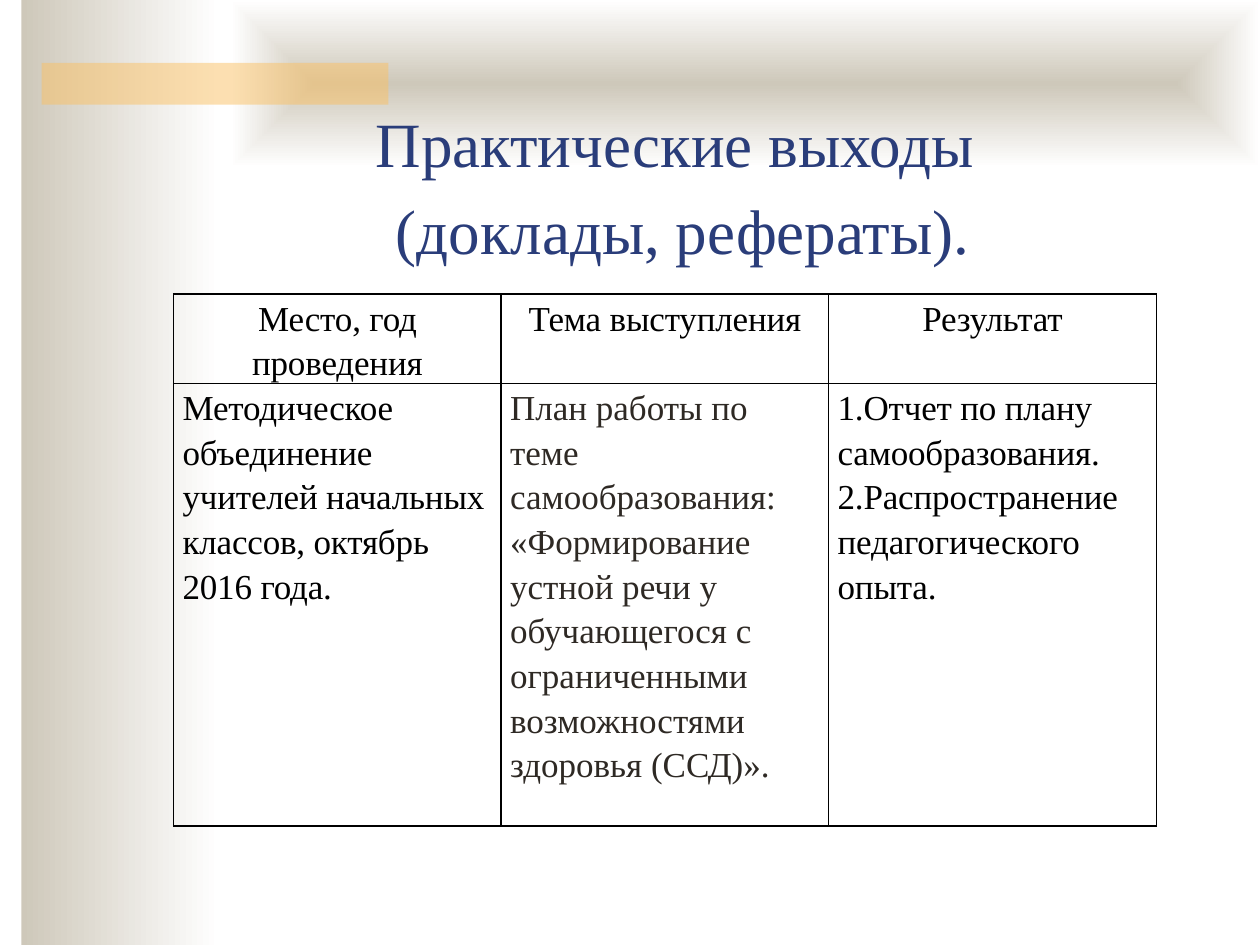
from lxml import etree
from pptx import Presentation
from pptx import util as u
from pptx.dml.color import RGBColor
from pptx.enum import shapes, text
from pptx.oxml import parse_xml
from pptx.oxml.ns import nsdecls, qn

COLORS = {
    "sand": "CEC8BA",
    "white": "FFFFFF",
    "amber": "FAC164",
    "navy": "2A3D7A",
    "black": "000000",
    "charcoal": "2E2924",
}
FONT = "Times New Roman"
HEADERS = ["Место, год проведения", "Тема выступления", "Результат"]
REPORT = [
    ["Методическое объединение учителей начальных классов, октябрь 2016 года."],
    ["План работы по теме самообразования: «Формирование устной речи "
     "у обучающегося с ограниченными возможностями здоровья (ССД)»."],
    ["1.Отчет по плану самообразования.",
     "2.Распространение педагогического опыта."],
]


def rgb(name):
    return RGBColor.from_string(COLORS[name])


def write(paragraph, content, size=20, color="black", align=None, spacing=0):
    paragraph.text = content
    paragraph.alignment = align
    paragraph.line_spacing = 1.15
    paragraph.space_before = paragraph.space_after = u.Pt(0)
    paragraph.font.size = u.Pt(size)
    for run in paragraph.runs:
        run.font.name = FONT
        run.font.size = u.Pt(size)
        run.font.color.rgb = rgb(color)
        run.font._element.set("spc", str(spacing))


def add_panel(slide, box):
    panel = slide.shapes.add_shape(shapes.MSO_SHAPE.RECTANGLE, *box)
    panel.shadow.inherit = False
    panel.line.fill.background()
    return panel


def fade(panel):
    panel.fill.gradient()
    panel.fill.gradient_angle = 0
    for stop, name in zip(panel.fill.gradient_stops, ("sand", "white")):
        stop.color.rgb = rgb(name)


def add_backdrop(slide, left, top, width, height):
    side_band = add_panel(
        slide, (left + u.Cm(0.43), top, u.Cm(4.01), height))
    fade(side_band)

    top_glow = add_panel(
        slide, (left + u.Cm(4.65), top, width - u.Cm(4.65), u.Cm(3.38)))
    fade(top_glow)
    gradient = top_glow._element.spPr.find(qn("a:gradFill"))
    gradient.replace(gradient.find(qn("a:lin")), parse_xml(
        f'<a:path {nsdecls("a")} path="rect">'
        '<a:fillToRect l="50000" t="50000" r="50000" b="50000"/></a:path>'))

    accent = add_panel(
        slide, (left + u.Cm(0.84), top + u.Cm(1.27), u.Cm(6.99), u.Cm(0.84)))
    accent.fill.solid()
    accent.fill.fore_color.rgb = rgb("amber")
    tint = accent._element.spPr.find(qn("a:solidFill"))[0]
    etree.SubElement(tint, qn("a:alpha"), val="50000")


def add_title(slide, left, top, width, height):
    title = slide.shapes.title
    title.left, title.top, title.width, title.height = left, top, width, height
    slide.shapes._spTree.append(title._element)
    frame = title.text_frame
    frame.word_wrap = True
    frame.auto_size = text.MSO_AUTO_SIZE.NONE
    frame.vertical_anchor = text.MSO_ANCHOR.BOTTOM
    write(frame.paragraphs[0], "Практические выходы \v(доклады, рефераты).",
          size=36, color="navy", align=text.PP_ALIGN.CENTER)


def format_cell(cell):
    cell.margin_left = cell.margin_right = u.Cm(0.18)
    cell.margin_top = cell.margin_bottom = 0
    cell.vertical_anchor = text.MSO_ANCHOR.TOP
    properties = cell._tc.get_or_add_tcPr()
    for side in ("lnL", "lnR", "lnT", "lnB"):
        properties.append(parse_xml(
            f'<a:{side} {nsdecls("a")} w="12700"><a:solidFill>'
            f'<a:srgbClr val="{COLORS["black"]}"/></a:solidFill></a:{side}>'))
    cell.fill.background()


def add_report_table(slide, left, top, width, height):
    table = slide.shapes.add_table(
        2, len(HEADERS), left, top, width, height).table
    table.first_row = table.horz_banding = False
    table.rows[0].height = u.Cm(1.8)
    table.rows[1].height = height - u.Cm(1.8)
    for index, (header, entries) in enumerate(zip(HEADERS, REPORT)):
        table.columns[index].width = width // len(HEADERS)
        heading, body = table.cell(0, index), table.cell(1, index)
        format_cell(heading)
        format_cell(body)
        write(heading.text_frame.paragraphs[0], header,
              align=text.PP_ALIGN.CENTER, spacing=-10)
        is_topic = index == 1
        frame = body.text_frame
        for order, entry in enumerate(entries):
            paragraph = frame.add_paragraph() if order else frame.paragraphs[0]
            write(paragraph, entry, align=text.PP_ALIGN.LEFT,
                  color="charcoal" if is_topic else "black",
                  spacing=0 if is_topic else -10)


def main():
    deck = Presentation()
    deck.slide_width, deck.slide_height = u.Cm(25.4), u.Cm(19.05)
    slide = deck.slides.add_slide(deck.slide_layouts[5])
    slide.background.fill.solid()
    slide.background.fill.fore_color.rgb = rgb("white")
    add_backdrop(slide, 0, 0, deck.slide_width, deck.slide_height)
    add_title(slide, u.Cm(2.97), u.Cm(2.34), u.Cm(21.59), u.Cm(3.18))
    add_report_table(slide, u.Cm(3.5), u.Cm(5.93), u.Cm(19.81), u.Cm(10.72))
    deck.save("out.pptx")


if __name__ == "__main__":
    main()
